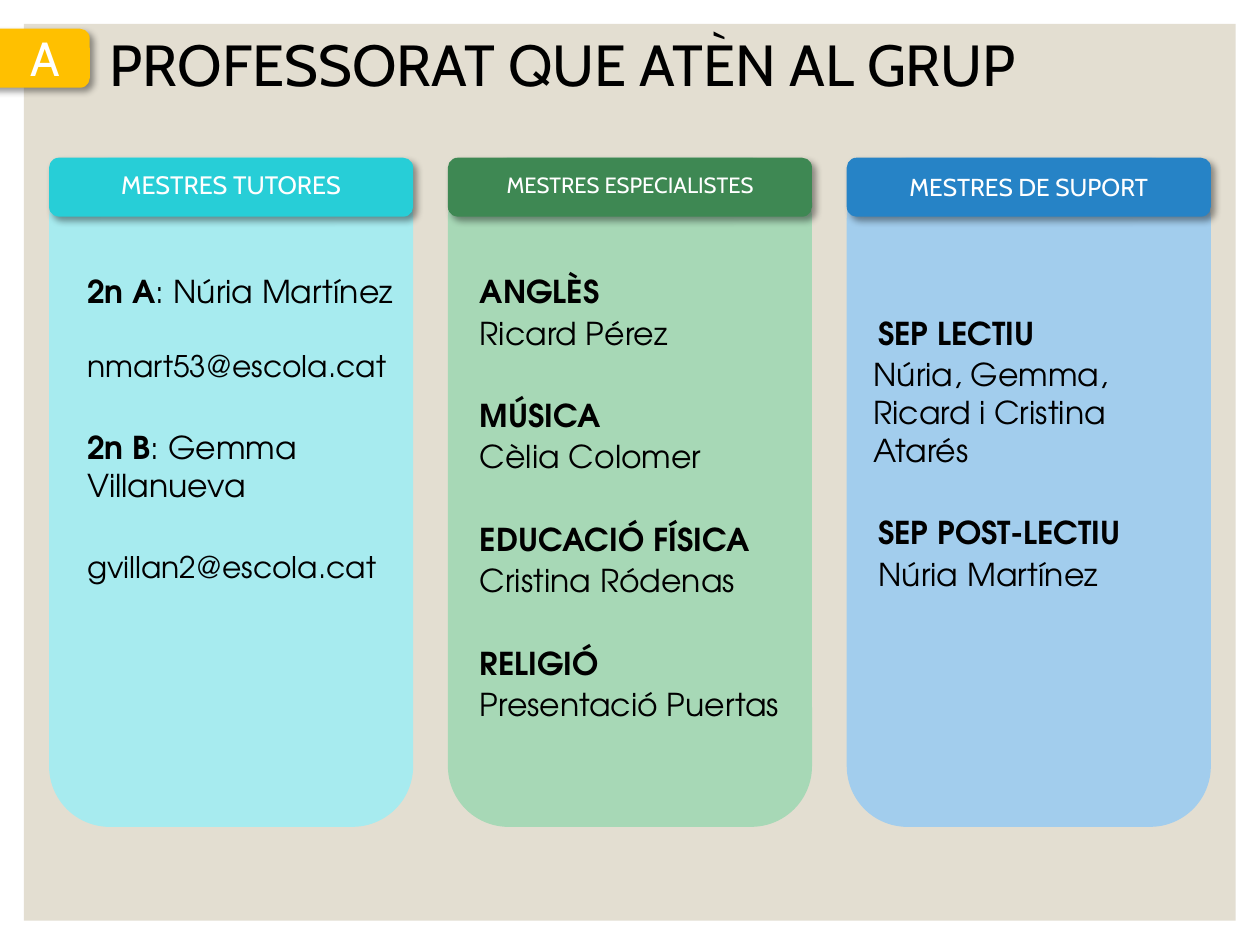
from dataclasses import dataclass

from lxml.etree import SubElement
from pptx import Presentation
from pptx.dml.color import RGBColor
from pptx.enum.shapes import MSO_SHAPE
from pptx.enum.text import MSO_ANCHOR, MSO_AUTO_SIZE, PP_ALIGN
from pptx.oxml.ns import qn
from pptx.util import Cm, Pt

COLORS = {
    "panel": "E3DED1", "badge": "FFC000", "black": "000000", "white": "FFFFFF",
    "cyan": "27CED7", "pale cyan": "A7EBEF",
    "green": "3E8853", "pale green": "A7D8B6",
    "blue": "2683C6", "pale blue": "A2CDED",
}
HEADING_FONT, BODY_FONT = "Cabin", "TeX Gyre Adventor"
COLUMN_LEFT, COLUMN_STEP, COLUMN_TOP = 0.99, 8.04, 3.18
COLUMN_WIDTH, COLUMN_HEIGHT, HEADER_HEIGHT = 7.34, 13.49, 1.19
NEAR, FAR = 2, 25.6  # points before a line: within an entry, before a new entry


@dataclass
class Line:
    bold: str = ""
    plain: str = ""
    before: float = NEAR
    size: float = 18
    indent: float = 0.1


@dataclass
class Column:
    heading: str
    heading_size: float
    heading_spacing: float
    color: str
    list_offset: float
    list_top: float
    list_width: float
    lines: list[Line]


COLUMNS = [
    Column("MESTRES TUTORES", 14.4, 0.8, "cyan", 0.41, 5.36, 7.34, [
        Line("2n A", ": Núria Martínez", before=0),
        Line(plain="nmart53@escola.cat", before=21.6, size=17),
        Line("2n B", ": Gemma Villanueva", before=FAR),
        Line(plain="gvillan2@escola.cat", before=FAR, size=17),
    ]),
    Column("MESTRES ESPECIALISTES", 12.6, 0.8, "green", 0.29, 5.36, 6.76, [
        Line("ANGLÈS", before=0), Line(plain="Ricard Pérez"),
        Line("MÚSICA", before=FAR), Line(plain="Cèlia Colomer"),
        Line("EDUCACIÓ FÍSICA", before=FAR), Line(plain="Cristina Ródenas"),
        Line("RELIGIÓ", before=FAR), Line(plain="Presentació Puertas"),
    ]),
    Column("MESTRES DE SUPORT", 14, 1, "blue", 0.28, 6.2, 6.76, [
        Line("SEP LECTIU", before=0),
        Line(plain="Núria, Gemma, Ricard i Cristina Atarés", indent=0),
        Line("SEP POST-LECTIU", before=FAR), Line(plain="Núria Martínez"),
    ]),
]


def write_span(para, text: str, *, size: float, font: str = HEADING_FONT,
               color: str = "white", bold: bool = False) -> None:
    span = para.add_run()
    span.text = text
    span.font.size = Pt(size)
    span.font.name = font
    span.font.bold = bold
    span.font.color.rgb = RGBColor.from_string(COLORS[color])


def write_heading(box, text: str, *, align=PP_ALIGN.CENTER, spacing: float = 0.9,
                  **span_format) -> None:
    frame = box.text_frame
    frame.word_wrap = True
    frame.auto_size = MSO_AUTO_SIZE.NONE
    frame.vertical_anchor = MSO_ANCHOR.MIDDLE
    para = frame.paragraphs[0]
    para.alignment = align
    para.line_spacing = spacing
    write_span(para, text, **span_format)


def add_block(slide, kind, color: str, left: float, top: float,
              width: float, height: float):
    block = slide.shapes.add_shape(kind, Cm(left), Cm(top), Cm(width), Cm(height))
    block.shadow.inherit = False
    block.fill.solid()
    block.fill.fore_color.rgb = RGBColor.from_string(COLORS[color])
    block.line.fill.background()
    return block


def add_drop_shadow(block) -> None:
    effects = block.element.spPr.find(qn("a:effectLst"))
    shadow = SubElement(effects, qn("a:outerShdw"), blurRad=str(Pt(4)),
                        dist=str(Pt(3)), dir=str(45 * 60000), rotWithShape="0")
    tint = SubElement(shadow, qn("a:srgbClr"), val=COLORS["black"])
    SubElement(tint, qn("a:alpha"), val="40000")


def place_on_top(slide, box, left: float, top: float, width: float, height: float) -> None:
    box.left, box.top, box.width, box.height = Cm(left), Cm(top), Cm(width), Cm(height)
    slide.shapes.element.append(box.element)


def write_list(box, lines: list[Line]) -> None:
    frame = box.text_frame
    frame.word_wrap = True
    frame.auto_size = MSO_AUTO_SIZE.NONE
    frame.vertical_anchor = MSO_ANCHOR.TOP
    for index, line in enumerate(lines):
        para = frame.add_paragraph() if index else frame.paragraphs[0]
        para.alignment = PP_ALIGN.LEFT
        para.line_spacing = 1.0
        para.space_before = Pt(line.before)
        properties = para._p.get_or_add_pPr()
        properties.set("marL", str(Cm(line.indent)))
        properties.set("indent", "0")
        SubElement(properties, qn("a:buNone"))
        for text, bold in ((line.bold, True), (line.plain, False)):
            if text:
                write_span(para, text, size=line.size, font=BODY_FONT,
                           color="black", bold=bold)


def add_column(slide, column: Column, left: float, box) -> None:
    add_block(slide, MSO_SHAPE.ROUNDED_RECTANGLE, f"pale {column.color}",
              left, COLUMN_TOP, COLUMN_WIDTH, COLUMN_HEIGHT)
    header = add_block(slide, MSO_SHAPE.ROUNDED_RECTANGLE, column.color,
                       left, COLUMN_TOP, COLUMN_WIDTH, HEADER_HEIGHT)
    add_drop_shadow(header)
    write_heading(header, column.heading, size=column.heading_size,
                  spacing=column.heading_spacing)
    place_on_top(slide, box, left + column.list_offset, column.list_top,
                 column.list_width, 10.2)
    write_list(box, column.lines)


def main() -> None:
    deck = Presentation()
    deck.slide_width, deck.slide_height = Cm(25.4), Cm(19.05)
    slide = deck.slides.add_slide(deck.slide_layouts.get_by_name("Comparison"))
    title, *boxes = slide.placeholders

    add_block(slide, MSO_SHAPE.RECTANGLE, "panel", 0.48, 0.48, 24.43, 18.08)
    place_on_top(slide, title, 1.96, 0.56, 22.86, 1.63)
    write_heading(title, "PROFESSORAT QUE ATÈN AL GRUP", align=PP_ALIGN.LEFT,
                  size=33.1, color="black")

    badge = add_block(slide, MSO_SHAPE.ROUNDED_RECTANGLE, "badge",
                      -2.97, 0.58, 4.78, HEADER_HEIGHT)
    add_drop_shadow(badge)
    letter = slide.shapes.add_textbox(Cm(-0.08), Cm(0.53), Cm(1.98), Cm(1.4))
    write_heading(letter, "A", size=27.3)

    for index, (column, box) in enumerate(zip(COLUMNS, boxes)):
        add_column(slide, column, COLUMN_LEFT + index * COLUMN_STEP, box)
    for unused in boxes[len(COLUMNS):]:
        slide.shapes.element.remove(unused.element)

    deck.save("out.pptx")


if __name__ == "__main__":
    main()
